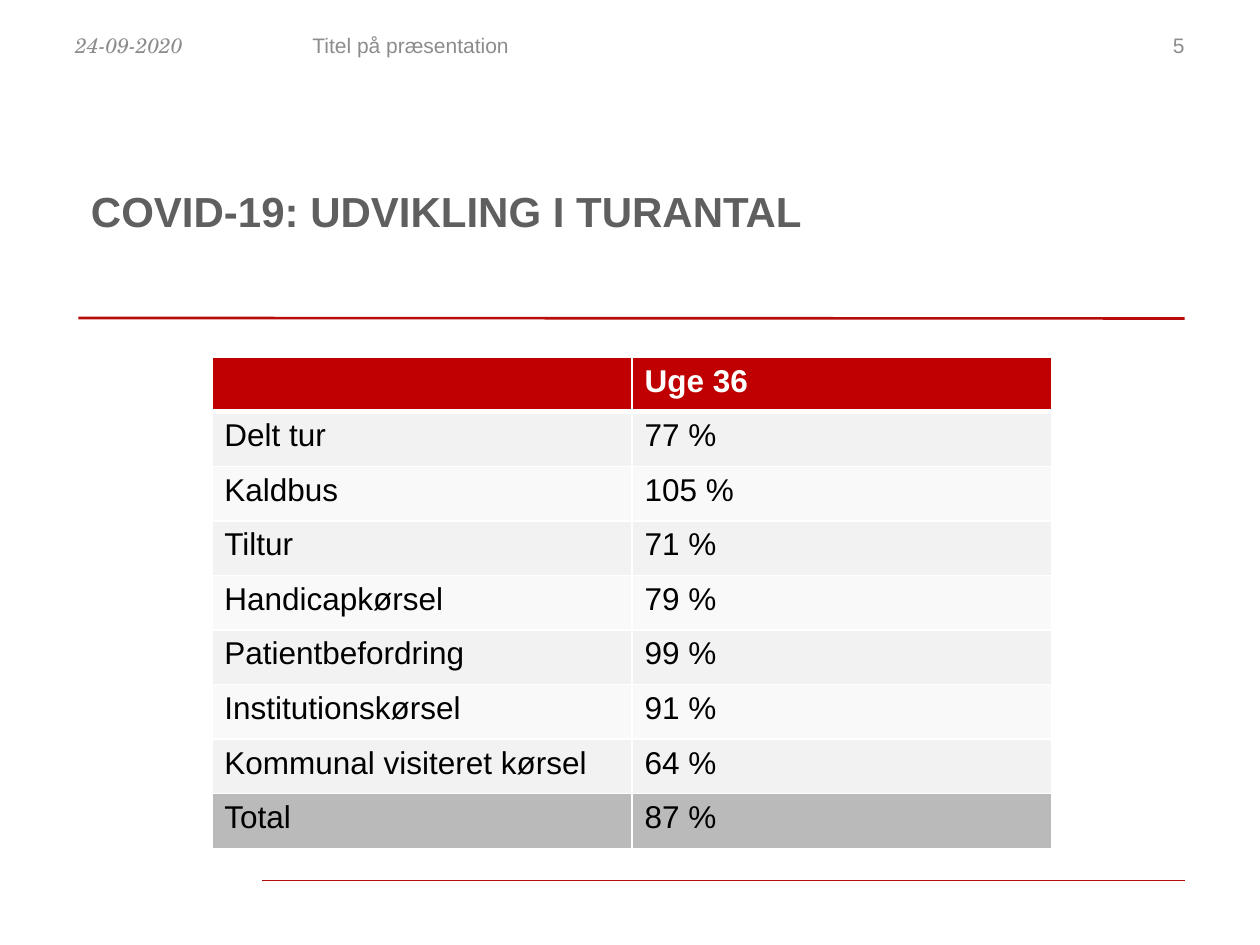
"""Build the slide with the table of trip volumes in week 36."""
from lxml import etree
from pptx import Presentation
from pptx.dml.color import RGBColor
from pptx.enum.shapes import MSO_CONNECTOR
from pptx.enum.text import MSO_ANCHOR, PP_ALIGN
from pptx.oxml.ns import qn
from pptx.util import Cm, Pt

STRAIGHT = MSO_CONNECTOR.STRAIGHT
TOP = MSO_ANCHOR.TOP
LEFT, RIGHT = PP_ALIGN.LEFT, PP_ALIGN.RIGHT

TITLE = "COVID-19: UDVIKLING I TURANTAL"
PAGE_HEADS = [
    ("24-09-2020", 1.27, 5.92, LEFT, "date_font", True),
    ("Titel på præsentation", 6.05, 8.05, LEFT, "font", False),
    ("5", 18.21, 5.92, RIGHT, "font", False),
]
TRIPS = [
    ("", "Uge 36"),
    ("Delt tur", "77 %"),
    ("Kaldbus", "105 %"),
    ("Tiltur", "71 %"),
    ("Handicapkørsel", "79 %"),
    ("Patientbefordring", "99 %"),
    ("Institutionskørsel", "91 %"),
    ("Kommunal visiteret kørsel", "64 %"),
    ("Total", "87 %"),
]
RULES = [(1.58, 6.41, 23.88, 6.42, 1.5), (5.28, 17.75, 23.88, 17.75, 0.5)]

THEME = {
    "font": "Arial", "date_font": "TeX Gyre Schola",
    "title_size": 24, "head_size": 12, "table_size": 18,
    "title": "5F5F5F", "head": "8C8C8C", "rule": "B70C0A",
    "table_head": "C00000", "bands": ("F9F9F9", "F2F2F2"),
    "total": "BABABA", "white": "FFFFFF", "black": "000000",
}
COLUMN_WIDTH, ROW_HEIGHT = 8.47, 1.1


def color(value):
    return RGBColor.from_string(value)


def write(frame, text, size, ink, align=LEFT, font="font", bold=False, italic=False):
    paragraph = frame.paragraphs[0]
    paragraph.alignment = align
    run = paragraph.add_run()
    run.text = text
    run.font.name = THEME[font]
    run.font.size = Pt(THEME[size])
    run.font.color.rgb = color(THEME[ink])
    run.font.bold = bold
    run.font.italic = italic


def add_rule(slide, x1, y1, x2, y2, weight):
    rule = slide.shapes.add_connector(STRAIGHT, Cm(x1), Cm(y1), Cm(x2), Cm(y2))
    rule.line.color.rgb = color(THEME["rule"])
    rule.line.width = Pt(weight)
    etree.SubElement(rule.element.spPr, qn("a:effectLst"))


def add_borders(cell, **weights):
    properties = cell._tc.get_or_add_tcPr()
    for side in "LRTB":
        border = etree.SubElement(properties, qn(f"a:ln{side}"), w=str(Pt(weights.get(side, 1))))
        fill = etree.SubElement(border, qn("a:solidFill"))
        etree.SubElement(fill, qn("a:srgbClr"), val=THEME["white"])


def row_fill(index):
    if index == 0:
        return THEME["table_head"]
    if index == len(TRIPS) - 1:
        return THEME["total"]
    return THEME["bands"][index % 2]


def add_trip_table(slide):
    columns = len(TRIPS[0])
    table = slide.shapes.add_table(
        len(TRIPS), columns, Cm(4.27), Cm(7.2),
        Cm(COLUMN_WIDTH * columns), Cm(ROW_HEIGHT * len(TRIPS))).table
    table.first_row = table.horz_banding = False
    for column in table.columns:
        column.width = Cm(COLUMN_WIDTH)
    for index, values in enumerate(TRIPS):
        table.rows[index].height = Cm(ROW_HEIGHT)
        is_head = index == 0
        for cell, value in zip(table.rows[index].cells, values):
            add_borders(cell, T=3 if index == 1 else 1, B=3 if is_head else 1)
            cell.fill.solid()
            cell.fill.fore_color.rgb = color(row_fill(index))
            if value:
                write(cell.text_frame, value, "table_size",
                      "white" if is_head else "black", bold=is_head)


def main():
    deck = Presentation()
    deck.slide_width, deck.slide_height = Cm(25.4), Cm(19.05)
    slide = deck.slides.add_slide(deck.slide_layouts[5])
    for rule in RULES:
        add_rule(slide, *rule)

    title = slide.shapes.title
    title.left, title.top, title.width, title.height = Cm(1.58), Cm(3.61), Cm(22.3), Cm(2.79)
    title.text_frame.vertical_anchor = TOP
    write(title.text_frame, TITLE, "title_size", "title", bold=True)

    for text, left, width, align, font, italic in PAGE_HEADS:
        head = slide.shapes.add_textbox(Cm(left), Cm(0.54), Cm(width), Cm(1.02))
        head.text_frame.word_wrap = True
        write(head.text_frame, text, "head_size", "head", align, font, italic=italic)

    add_trip_table(slide)
    deck.save("out.pptx")


if __name__ == "__main__":
    main()
